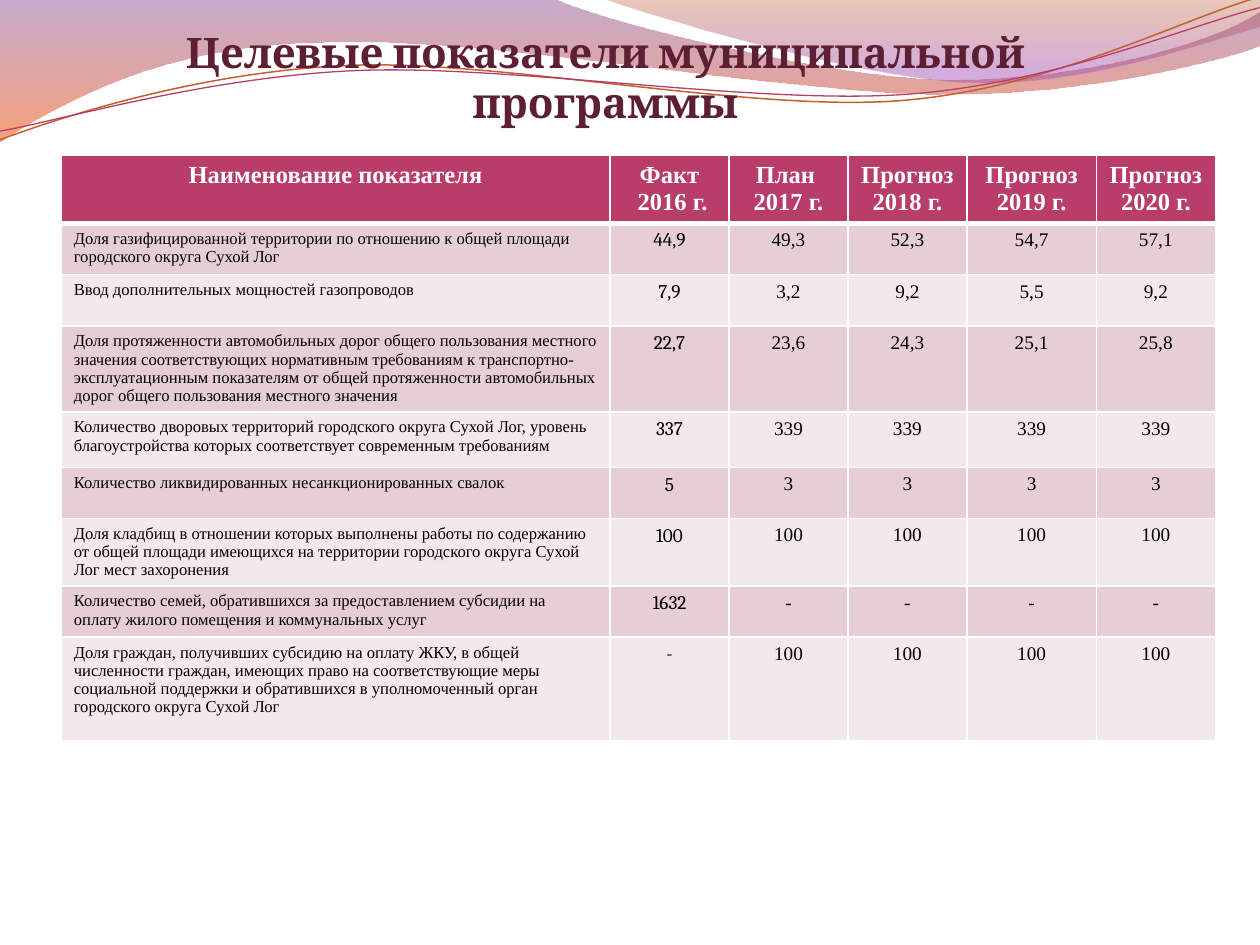
from lxml.etree import SubElement
from pptx import Presentation
from pptx.dml.color import RGBColor as RGB
from pptx.enum.text import MSO_ANCHOR as Anchor, PP_ALIGN as Align
from pptx.oxml.ns import qn
from pptx.util import Pt

COLORS = {
    "white": "FFFFFF", "black": "000000", "title": "5C1F34",
    "header": "B83D68", "band_dark": "E6CED4", "band_light": "F3E8EB",
    "purple": "834591", "orange": "F35307", "rust": "B74915",
    "violet": "A14BB4", "line_orange": "C45F30",
}
SERIF, HEAD_FONT = "Times New Roman", "Cambria"


class Deck:
    def __init__(self, width, height):
        self.prs = Presentation()
        self.prs.slide_width, self.prs.slide_height = Pt(width), Pt(height)
        self.slide = self.prs.slides.add_slide(self.prs.slide_layouts[6])

    def color(self, name):
        return RGB.from_string(COLORS[name])

    def style(self, p, size, color, font=SERIF, bold=False, align=Align.CENTER):
        p.alignment = align
        p.font.size, p.font.name, p.font.bold = Pt(size), font, bold
        p.font.color.rgb = self.color(color)

    def outline(self, start, segments, close):
        """Draw segments: two numbers make a line, six a cubic curve."""
        points = [(Pt(x), Pt(y)) for seg in segments
                  for x, y in zip(seg[::2], seg[1::2])]
        builder = self.slide.shapes.build_freeform(Pt(start[0]), Pt(start[1]))
        builder.add_line_segments(points, close=close)
        sp = builder.convert_to_shape()
        sp.shadow.inherit = False
        # Merge each curve's three points into one cubic segment
        lines = iter(list(sp._element.iter(qn("a:lnTo"))))
        for seg in segments:
            first = next(lines)
            if len(seg) == 6:
                first.tag = qn("a:cubicBezTo")
                for _ in range(2):
                    extra = next(lines)
                    first.append(extra[0])
                    extra.getparent().remove(extra)
        return sp

    def wave(self, start, segments, stops):
        sp = self.outline(start, segments, True)
        sp.line.fill.background()
        sp.fill.gradient()
        sp.fill.gradient_angle = 270
        for stop, (position, name, opacity) in zip(sp.fill.gradient_stops, stops):
            stop.position = position
            stop.color.rgb = self.color(name)
        # Opacity of each gradient stop
        clrs = sp._element.spPr.findall(".//" + qn("a:srgbClr"))
        for clr, (position, name, opacity) in zip(clrs, stops):
            SubElement(clr, qn("a:alpha")).set("val", str(opacity * 1000))

    def curve(self, start, segments, color, width):
        sp = self.outline(start, segments, False)
        sp.fill.background()
        sp.line.color.rgb = self.color(color)
        sp.line.width = Pt(width)

    def title(self, text, x, y, w, h):
        tf = self.slide.shapes.add_textbox(Pt(x), Pt(y), Pt(w), Pt(h)).text_frame
        tf.word_wrap = True
        tf.vertical_anchor = Anchor.BOTTOM
        tf.margin_left = tf.margin_right = tf.margin_bottom = 0
        tf.margin_top = Pt(3.6)
        p = tf.paragraphs[0]
        p.text = text
        self.style(p, 24, "title", HEAD_FONT, True)

    def borders(self, cell, top, bottom):
        tc_pr = cell._tc.get_or_add_tcPr()
        for side, width in (("L", 1), ("R", 1), ("T", top), ("B", bottom)):
            ln = SubElement(tc_pr, qn("a:ln" + side), w=str(Pt(width)))
            fill = SubElement(ln, qn("a:solidFill"))
            SubElement(fill, qn("a:srgbClr"), val=COLORS["white"])

    def table(self, rows, x, y, widths, heights):
        table = self.slide.shapes.add_table(
            len(rows), len(widths), Pt(x), Pt(y), Pt(sum(widths)), Pt(sum(heights))).table
        table.horz_banding = False
        for column, width in zip(table.columns, widths):
            column.width = Pt(width)
        for row, height in zip(table.rows, heights):
            row.height = Pt(height)
        for r, row in enumerate(rows):
            band = "header" if r == 0 else "band_dark" if r % 2 else "band_light"
            for c, text in enumerate(row):
                cell = table.cell(r, c)
                self.borders(cell, 3 if r == 1 else 1, 3 if r == 0 else 1)
                cell.fill.solid()
                cell.fill.fore_color.rgb = self.color(band)
                cell.margin_bottom = 0
                cell.text = text
                for p in cell.text_frame.paragraphs:
                    if r == 0:
                        self.style(p, 14, "white", bold=True)
                    elif c == 0:
                        self.style(p, 9.5, "black", align=Align.LEFT)
                    else:
                        self.style(p, 11, "black", HEAD_FONT if c == 1 else SERIF)


ROWS = [
    ("Наименование показателя", "Факт\n 2016 г.", "План \n2017 г.",
     "Прогноз 2018 г.", "Прогноз 2019 г.", "Прогноз 2020 г."),
    ("Доля газифицированной территории по отношению к общей площади городского "
     "округа Сухой Лог", "44,9", "49,3", "52,3", "54,7", "57,1"),
    ("Ввод дополнительных мощностей газопроводов", "7,9", "3,2", "9,2", "5,5", "9,2"),
    ("Доля протяженности автомобильных дорог общего пользования местного значения "
     "соответствующих нормативным требованиям к транспортно-эксплуатационным "
     "показателям от общей протяженности автомобильных дорог общего пользования "
     "местного значения", "22,7", "23,6", "24,3", "25,1", "25,8"),
    ("Количество дворовых территорий городского округа Сухой Лог, уровень "
     "благоустройства которых соответствует современным требованиям",
     "337", "339", "339", "339", "339"),
    ("Количество ликвидированных несанкционированных свалок", "5", "3", "3", "3", "3"),
    ("Доля кладбищ в отношении которых выполнены работы по содержанию от общей "
     "площади имеющихся на территории городского округа Сухой Лог мест захоронения",
     "100", "100", "100", "100", "100"),
    ("Количество семей, обратившихся за предоставлением субсидии на оплату жилого "
     "помещения и коммунальных услуг", "1632", "-", "-", "-", "-"),
    ("Доля граждан, получивших субсидию на оплату ЖКУ, в общей численности граждан, "
     "имеющих право на соответствующие меры социальной поддержки и обратившихся в "
     "уполномоченный орган городского округа Сухой Лог",
     "-", "100", "100", "100", "100"),
]


def main():
    deck = Deck(720, 540)

    # Wavy header bands
    deck.wave((0, -0.7), [
        (316.8, -0.7),
        (342.7, 12.2, 478.1, 45.4, 545.8, 45.4),
        (614.2, 45.4, 689.8, 26.6, 720, 6.5),
        (720.7, 25.9),
        (707.8, 31.7, 626.4, 54.7, 537.1, 54),
        (447.8, 54, 275, 20.2, 185, 24.5),
        (92.9, 25.2, 33.1, 59.8, -0.7, 81.4),
    ], [(0, "purple", 45), (1, "orange", 55)])
    deck.wave((344.9, -0.7), [
        (366.5, 7.9, 491, 44.6, 553.7, 46.8),
        (616.3, 49.7, 691.9, 23, 720, 15.1),
        (720, 0),
    ], [(0, "rust", 30), (0.8, "violet", 45)])

    # Thin curves across the header
    deck.curve((0, 79.9), [
        (34.6, 67, 113.8, 41, 199.4, 37.4),
        (284.4, 33.8, 427, 64.1, 513.4, 57.6),
        (599.8, 51.1, 675.4, 10.8, 718.6, -1.4),
    ], "line_orange", 0.85)
    deck.curve((0, 74.9), [
        (33.8, 69.1, 118.1, 43.9, 203.8, 40.3),
        (290.2, 36.7, 429.8, 59.8, 516.2, 54),
        (601.9, 48.2, 677.5, 15.1, 720, 4.3),
    ], "header", 0.75)

    # Title and indicator table
    deck.title("Целевые показатели муниципальной программы", 42.5, 45.2, 607, 27.4)
    deck.table(ROWS, 35, 88.6, [313.6, 68, 68, 68, 74, 68],
               [39, 29.3, 29.3, 48.9, 31.7, 29.2, 38.6, 29.2, 59])

    deck.prs.save("out.pptx")


if __name__ == "__main__":
    main()
